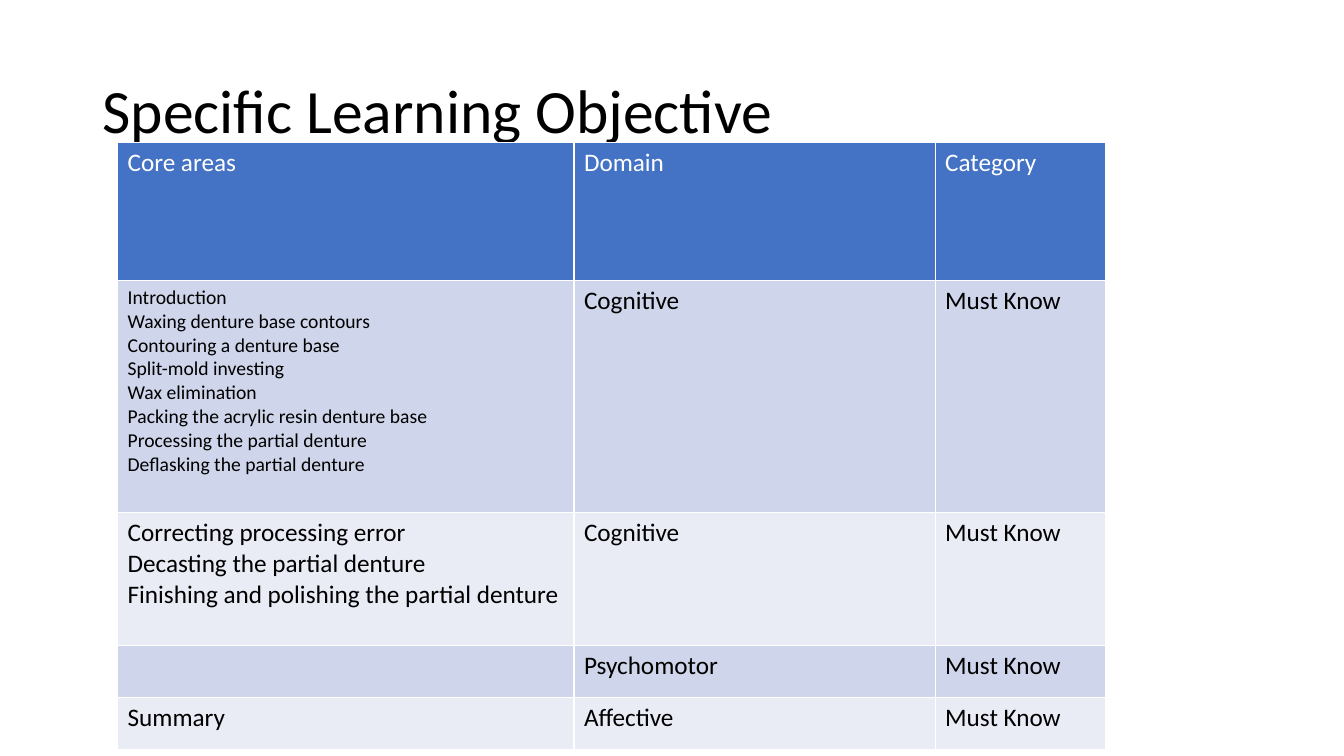
from pptx import Presentation
from pptx.dml.color import RGBColor
from pptx.enum.text import MSO_ANCHOR, MSO_AUTO_SIZE, PP_ALIGN
from pptx.util import Pt

HEADER = ["Core areas", "Domain", "Category"]
LAB_STEPS = """Introduction
Waxing denture base contours
Contouring a denture base
Split-mold investing
Wax elimination
Packing the acrylic resin denture base
Processing the partial denture
Deflasking the partial denture"""
FINISHING_STEPS = """Correcting processing error
Decasting the partial denture
Finishing and polishing the partial denture"""
OBJECTIVES = [
    HEADER,
    [LAB_STEPS, "Cognitive", "Must Know"],
    [FINISHING_STEPS, "Cognitive", "Must Know"],
    ["", "Psychomotor", "Must Know"],
    ["Summary", "Affective", "Must Know"],
]
COL_WIDTHS = [326, 258, 121.5]
ROW_HEIGHTS = [99, 165.7, 95, 37.2, 37.2]


def rgb(value):
    return RGBColor.from_string(value)


def write(tf, text, size=18, color="000000", font="Calibri", spacing=None):
    """Write one paragraph per line of text."""
    for i, line in enumerate(text.splitlines()):
        p = tf.paragraphs[0] if i == 0 else tf.add_paragraph()
        p.alignment = PP_ALIGN.LEFT
        p.line_spacing = spacing
        r = p.add_run()
        r.text = line
        r.font.name, r.font.size, r.font.bold = font, Pt(size), False
        r.font.color.rgb = rgb(color)


class Deck:
    header_fill = "4472C4"
    band_fills = ["E9EBF5", "CFD5EA"]

    def __init__(self, width, height):
        self.prs = Presentation()
        self.prs.slide_width, self.prs.slide_height = Pt(width), Pt(height)
        self.s = self.prs.slides.add_slide(self.prs.slide_layouts[5])

    def title(self, text, left, top, width, height):
        sp = self.s.shapes.title
        sp.left, sp.top, sp.width, sp.height = map(Pt, (left, top, width, height))
        tf = sp.text_frame
        tf.auto_size = MSO_AUTO_SIZE.NONE
        tf.vertical_anchor = MSO_ANCHOR.MIDDLE
        write(tf, text, size=44, spacing=0.9)

    def table(self, rows, left, top, widths, heights):
        frame = self.s.shapes.add_table(len(rows), len(widths), Pt(left), Pt(top),
                                        Pt(sum(widths)), Pt(sum(heights)))
        table = frame.table
        for col, width in zip(table.columns, widths):
            col.width = Pt(width)
        for i, (texts, height) in enumerate(zip(rows, heights)):
            table.rows[i].height = Pt(height)
            for j, text in enumerate(texts):
                cell = table.cell(i, j)
                cell.fill.solid()
                fill = self.band_fills[i % 2] if i else self.header_fill
                cell.fill.fore_color.rgb = rgb(fill)
                write(cell.text_frame, text, size=14 if text == LAB_STEPS else 18,
                      color="000000" if i else "FFFFFF")


def main():
    deck = Deck(960, 540)
    # Heading
    deck.title("Specific Learning Objective", 66, 28.8, 828, 104.4)
    # Objectives table
    deck.table(OBJECTIVES, 84, 101.5, COL_WIDTHS, ROW_HEIGHTS)
    deck.prs.save("out.pptx")


if __name__ == "__main__":
    main()
